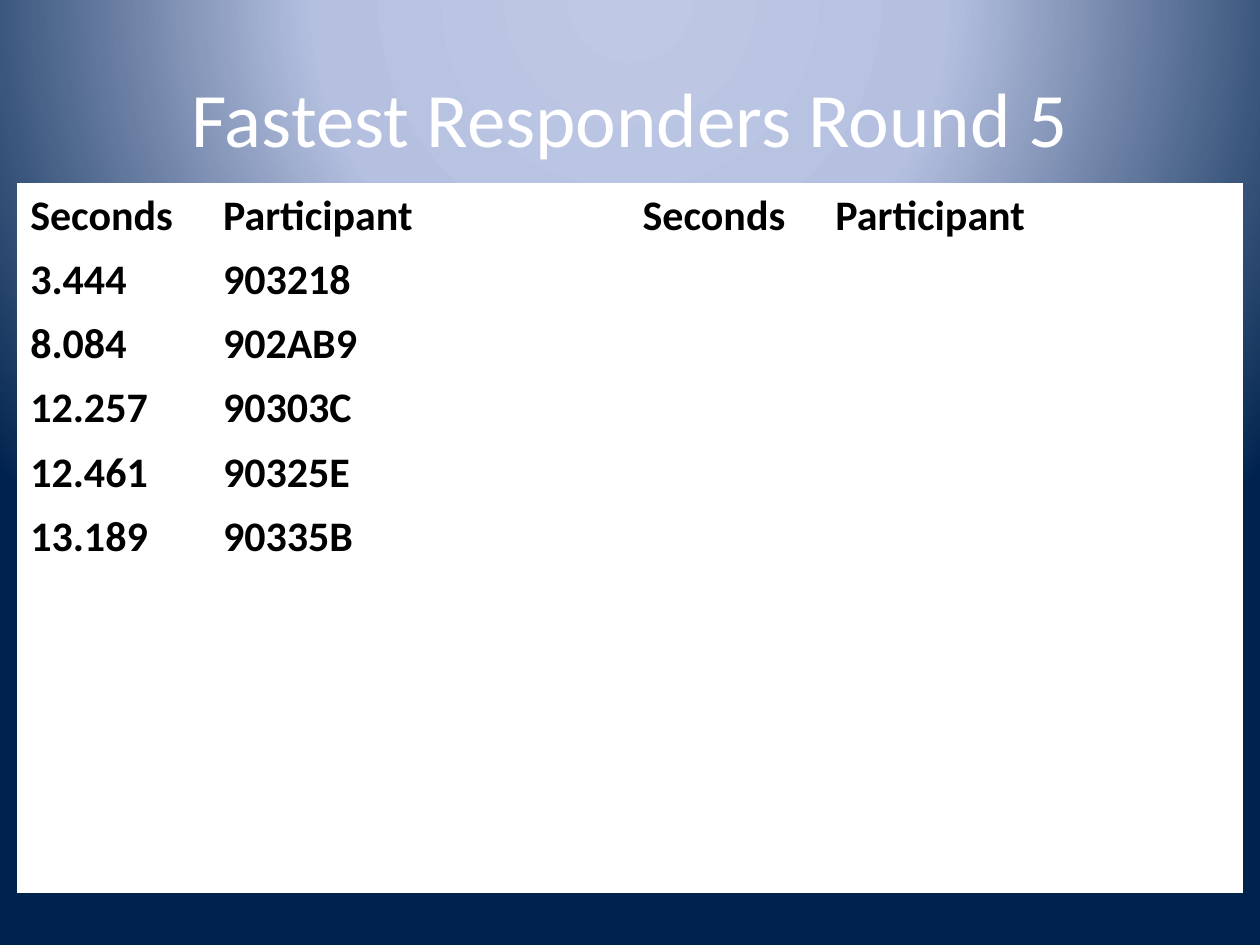
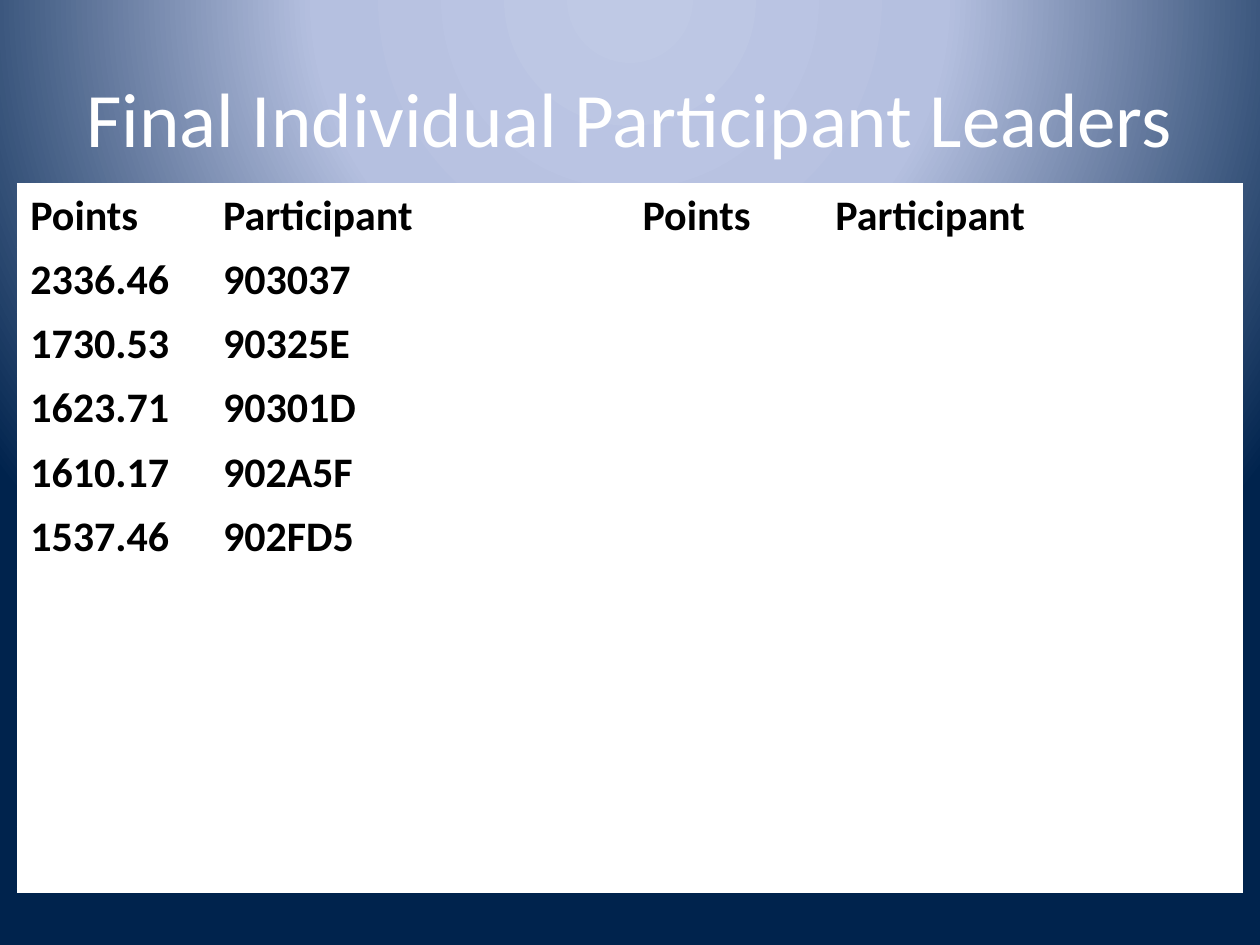
from pptx import Presentation
from pptx.dml.color import RGBColor
from pptx.enum.text import MSO_ANCHOR, PP_ALIGN
from pptx.oxml import parse_xml
from pptx.oxml.ns import nsdecls
from pptx.util import Inches, Pt

COLORS = {"white": "FFFFFF", "black": "000000",
          "glow": "BFC9E5", "haze": "B5C0E0", "navy": "00234D"}
FONT = "Calibri"
GRADIENT = [(0, "glow"), (40, "haze"), (100, "navy")]
COLUMN_WIDTHS = [1.53, 3.33] * 2
ROW_COUNT, ROW_HEIGHT = 11, 0.51

ROUND_5 = [("3.444", "903218"), ("8.084", "902AB9"), ("12.257", "90303C"),
           ("12.461", "90325E"), ("13.189", "90335B")]
LEADERS = [("2336.46", "903037"), ("1730.53", "90325E"), ("1623.71", "90301D"),
           ("1610.17", "902A5F"), ("1537.46", "902FD5")]


def set_background(master):
    """Give every slide the radial glow that starts above the top edge."""
    stops = "".join(
        f'<a:gs pos="{pos * 1000}"><a:srgbClr val="{COLORS[name]}"/></a:gs>'
        for pos, name in GRADIENT)
    bg = parse_xml(
        f'<p:bg {nsdecls("p", "a")}><p:bgPr><a:gradFill rotWithShape="1">'
        f'<a:gsLst>{stops}</a:gsLst><a:path path="circle">'
        '<a:fillToRect l="50000" t="-80000" r="50000" b="180000"/></a:path>'
        '</a:gradFill><a:effectLst/></p:bgPr></p:bg>')
    cSld = master.element.cSld
    if cSld.bg is not None:
        cSld.remove(cSld.bg)
    cSld.insert(0, bg)


def add_run(p, text, size, color, bold=False):
    r = p.add_run()
    r.text = text
    r.font.name = FONT
    r.font.size = Pt(size)
    r.font.bold = bold
    r.font.color.rgb = RGBColor.from_string(COLORS[color])


def add_title(s, text):
    sp = s.shapes.add_textbox(Inches(0.5), Inches(0.3), Inches(9), Inches(1.25))
    tf = sp.text_frame
    tf.word_wrap = True
    tf.vertical_anchor = MSO_ANCHOR.MIDDLE
    p = tf.paragraphs[0]
    p.alignment = PP_ALIGN.CENTER
    add_run(p, text, 44, "white")


def style_cell(cell, bottom_width):
    """White borders and white fill."""
    tcPr = cell._tc.get_or_add_tcPr()
    for side, width in (("L", 1), ("R", 1), ("T", 1), ("B", bottom_width)):
        tcPr.append(parse_xml(
            f'<a:ln{side} {nsdecls("a")} w="{Pt(width)}"><a:solidFill>'
            f'<a:srgbClr val="{COLORS["white"]}"/></a:solidFill></a:ln{side}>'))
    cell.fill.solid()
    cell.fill.fore_color.rgb = RGBColor.from_string(COLORS["white"])


def add_ranking(s, measure, entries):
    """Two side-by-side lists; the right one has only its headings."""
    table = s.shapes.add_table(
        ROW_COUNT, len(COLUMN_WIDTHS), Inches(0.14), Inches(1.46),
        Inches(sum(COLUMN_WIDTHS)), Inches(ROW_COUNT * ROW_HEIGHT)).table
    table.first_row = table.horz_banding = False
    for column, width in zip(table.columns, COLUMN_WIDTHS):
        column.width = Inches(width)
    for i, row in enumerate(table.rows):
        row.height = Inches(ROW_HEIGHT)
        for cell in row.cells:
            style_cell(cell, 3 if i == ROW_COUNT - 1 else 1)
    for i, values in enumerate([(measure, "Participant") * 2, *entries]):
        for j, value in enumerate(values):
            p = table.cell(i, j).text_frame.paragraphs[0]
            add_run(p, value, 24, "black", bold=True)


def main():
    prs = Presentation()
    prs.slide_width, prs.slide_height = Inches(10), Inches(7.5)
    set_background(prs.slide_master)
    for title, measure, entries in (
            ("Fastest Responders Round 5", "Seconds", ROUND_5),
            ("Final Individual Participant Leaders", "Points", LEADERS)):
        s = prs.slides.add_slide(prs.slide_layouts[6])
        add_title(s, title)
        add_ranking(s, measure, entries)
    prs.save("out.pptx")


if __name__ == "__main__":
    main()
